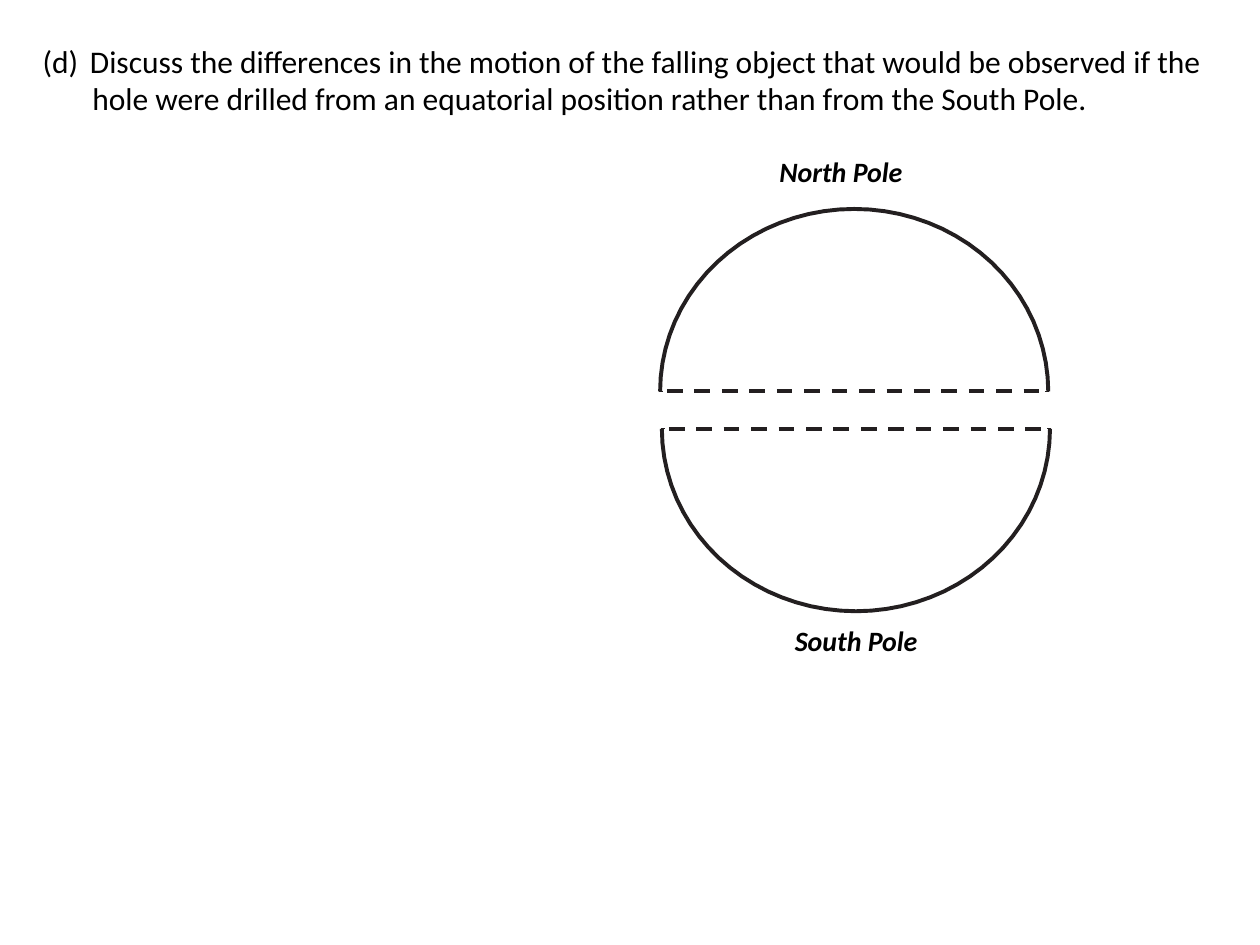
from math import cos, pi, sin

from lxml.etree import SubElement
from pptx import Presentation
from pptx.dml.color import RGBColor
from pptx.enum.dml import MSO_LINE_DASH_STYLE as Dash
from pptx.enum.shapes import MSO_CONNECTOR as Conn
from pptx.enum.text import MSO_AUTO_SIZE as AutoSize
from pptx.oxml.ns import qn
from pptx.util import Pt

COLORS = {"text": "000000", "line": "231F20"}
BODY = {"name": "Calibri", "size": Pt(18)}
LABEL = {"name": "Calibri", "size": Pt(16), "bold": True, "italic": True}
STEPS = 40  # segments in each half circle


def add_run(p, text, fmt):
    r = p.add_run()
    r.text = text
    for name, value in fmt.items():
        setattr(r.font, name, value)
    r.font.color.rgb = RGBColor.from_string(COLORS["text"])


def add_text_box(s, box, wrap):
    tf = s.shapes.add_textbox(*map(Pt, box)).text_frame
    tf.word_wrap = wrap
    tf.auto_size = AutoSize.SHAPE_TO_FIT_TEXT
    return tf


def style_line(sp):
    sp.line.color.rgb = RGBColor.from_string(COLORS["line"])
    sp.line.width = Pt(2.25)


def add_line(s, x1, y1, x2, y2, dash=None):
    sp = s.shapes.add_connector(Conn.STRAIGHT, Pt(x1), Pt(y1), Pt(x2), Pt(y2))
    style_line(sp)
    if dash:
        sp.line.dash_style = dash
    SubElement(sp.element.spPr, qn("a:effectLst"))


def add_question(s, box, lines):
    """Lettered question: a numbered line and its indented continuation."""
    tf = add_text_box(s, box, True)
    for i, (text, margin, indent) in enumerate(lines):
        p = tf.paragraphs[0] if i == 0 else tf.add_paragraph()
        pPr = p._p.get_or_add_pPr()
        pPr.set("marL", str(Pt(margin)))
        pPr.set("indent", str(Pt(indent)))
        if indent:
            SubElement(pPr, qn("a:buFont"), typeface="+mj-lt")
            SubElement(pPr, qn("a:buAutoNum"), type="alphaLcParenBoth", startAt="4")
        else:
            SubElement(pPr, qn("a:buNone"))
        add_run(p, text, BODY)


def add_hemisphere(s, box, north):
    """Half outline that fills the box, with a dashed flat side."""
    left, top, width, height = box
    flat = top + height if north else top
    side = -1 if north else 1
    points = [(Pt(left + width / 2 * (1 - cos(pi * i / STEPS))),
               Pt(flat + side * height * sin(pi * i / STEPS)))
              for i in range(STEPS + 1)]
    builder = s.shapes.build_freeform(*points[0])
    builder.add_line_segments(points[1:], close=False)
    arc = builder.convert_to_shape()
    arc.shadow.inherit = False
    arc.fill.background()
    style_line(arc)

    # Dashed cut between two short corner ticks
    add_line(s, left + 4, flat, left + width - 4, flat, Dash.DASH)
    for x in (left + 0.7, left + width - 0.7):
        add_line(s, x, flat - 0.4, x, flat + 0.4)


def add_label(s, box, text):
    add_run(add_text_box(s, box, False).paragraphs[0], text, LABEL)


def main():
    prs = Presentation()
    prs.slide_width, prs.slide_height = Pt(720), Pt(540)
    s = prs.slides.add_slide(prs.slide_layouts[6])

    # Question
    add_question(s, (17.3, 20.2, 690.5, 51.1), [
        ("Discuss the differences in the motion of the falling object that "
         "would be observed if the", 27, -27),
        ("hole were drilled from an equatorial position rather than from "
         "the South Pole.", 28.4, 0),
    ])

    # Earth cut along the equator
    add_hemisphere(s, (377.2, 119.4, 221.8, 104.3), north=True)
    add_hemisphere(s, (378.2, 245, 221.8, 104.3), north=False)
    add_label(s, (438.2, 85, 101.5, 31.7), "North Pole")
    add_label(s, (447.1, 352.8, 103, 31.7), "South Pole")

    prs.save("out.pptx")


if __name__ == "__main__":
    main()
